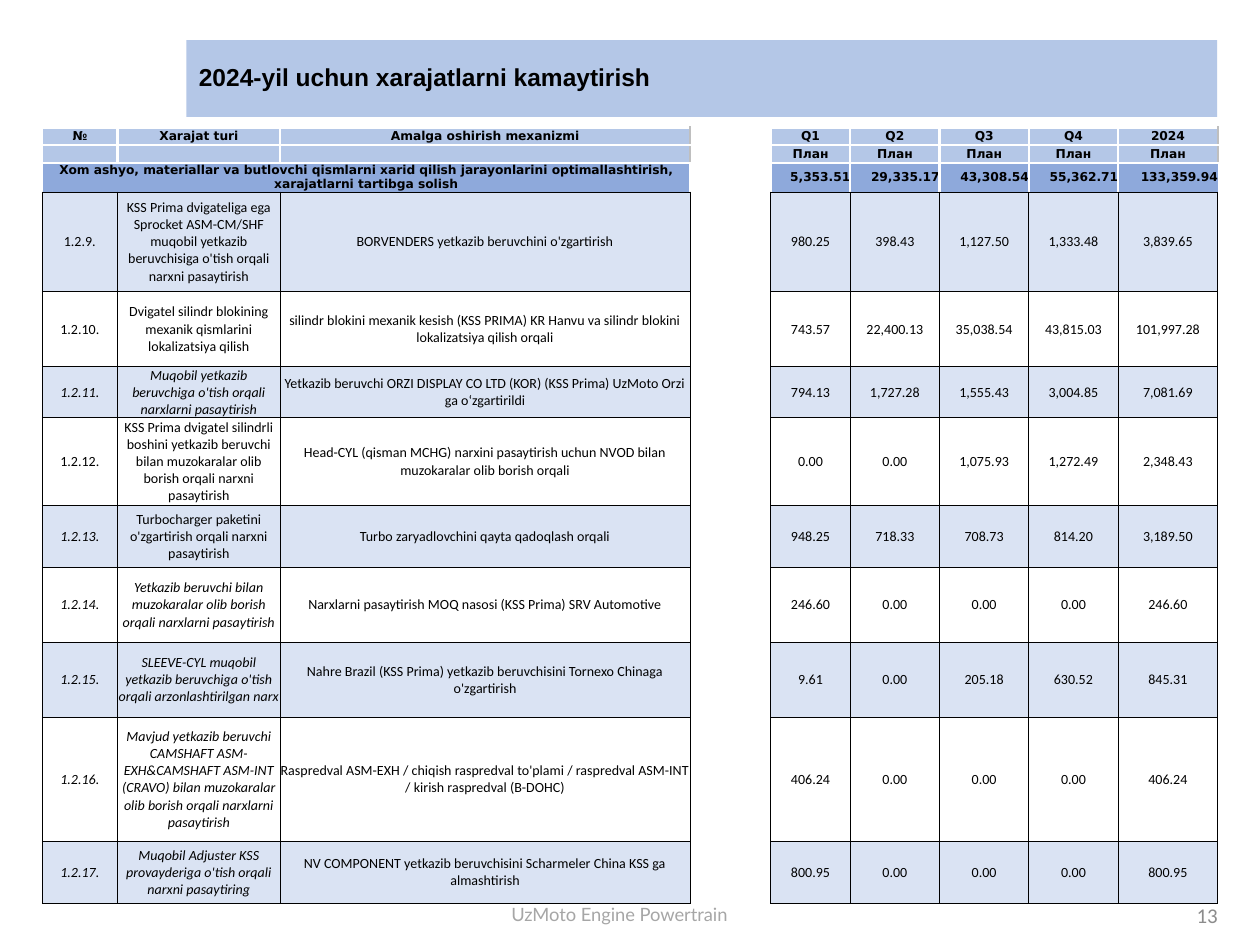
from lxml.etree import SubElement
from pptx import Presentation
from pptx.dml.color import RGBColor
from pptx.enum.shapes import MSO_SHAPE as Shape
from pptx.enum.text import MSO_ANCHOR as Anchor, PP_ALIGN as Align
from pptx.oxml.ns import qn
from pptx.util import Cm, Pt

# Content
TITLE = "2024-yil uchun xarajatlarni kamaytirish"
FOOTER = "UzMoto Engine Powertrain"
PAGE = "13"
HEADERS = [
    ["№", "Xarajat turi", "Amalga oshirish mexanizmi", "", "Q1", "Q2", "Q3", "Q4", "2024"],
    ["", "", "", ""] + ["План"] * 5,
]
SECTION = [
    "Xom ashyo, materiallar va butlovchi qismlarni xarid qilish jarayonlarini "
    "optimallashtirish, xarajatlarni tartibga solish",
    "", "", "", "5,353.51", "29,335.17", "43,308.54", "55,362.71", "133,359.94",
]
# number, cost type, mechanism, values, count of leading italic cells
MEASURES = [
    ("1.2.9.", "KSS Prima dvigateliga ega Sprocket ASM-CM/SHF muqobil yetkazib "
     "beruvchisiga o'tish orqali narxni pasaytirish",
     "BORVENDERS yetkazib beruvchini o'zgartirish",
     "980.25 398.43 1,127.50 1,333.48 3,839.65", 0),
    ("1.2.10.", "Dvigatel silindr blokining mexanik qismlarini lokalizatsiya qilish",
     "silindr blokini mexanik kesish (KSS PRIMA) KR Hanvu va silindr blokini "
     "lokalizatsiya qilish orqali",
     "743.57 22,400.13 35,038.54 43,815.03 101,997.28", 0),
    ("1.2.11.", "Muqobil yetkazib beruvchiga o'tish orqali narxlarni pasaytirish",
     "Yetkazib beruvchi ORZI DISPLAY CO LTD (KOR) (KSS Prima) UzMoto Orzi ga o‘zgartirildi",
     "794.13 1,727.28 1,555.43 3,004.85 7,081.69", 2),
    ("1.2.12.", "KSS Prima dvigatel silindrli boshini yetkazib beruvchi bilan "
     "muzokaralar olib borish orqali narxni pasaytirish",
     "Head-CYL (qisman MCHG) narxini pasaytirish uchun NVOD bilan muzokaralar olib borish orqali",
     "0.00 0.00 1,075.93 1,272.49 2,348.43", 0),
    ("1.2.13.", "Turbocharger paketini o'zgartirish orqali narxni pasaytirish",
     "Turbo zaryadlovchini qayta qadoqlash orqali",
     "948.25 718.33 708.73 814.20 3,189.50", 1),
    ("1.2.14.", "Yetkazib beruvchi bilan muzokaralar olib borish orqali narxlarni pasaytirish",
     "Narxlarni pasaytirish MOQ nasosi (KSS Prima) SRV Automotive",
     "246.60 0.00 0.00 0.00 246.60", 2),
    ("1.2.15.", "SLEEVE-CYL muqobil yetkazib beruvchiga o'tish orqali arzonlashtirilgan narx",
     "Nahre Brazil (KSS Prima) yetkazib beruvchisini Tornexo Chinaga o'zgartirish",
     "9.61 0.00 205.18 630.52 845.31", 2),
    ("1.2.16.", "Mavjud yetkazib beruvchi CAMSHAFT ASM-EXH&CAMSHAFT ASM-INT (CRAVO) "
     "bilan muzokaralar olib borish orqali narxlarni pasaytirish",
     "Raspredval ASM-EXH / chiqish raspredval to'plami / raspredval ASM-INT / "
     "kirish raspredval (B-DOHC)",
     "406.24 0.00 0.00 0.00 406.24", 2),
    ("1.2.17.", "Muqobil Adjuster KSS provayderiga o'tish orqali narxni pasaytiring",
     "NV COMPONENT yetkazib beruvchisini Scharmeler China KSS ga almashtirish",
     "800.95 0.00 0.00 0.00 800.95", 2),
]

# Sizes in centimetres
COLUMNS = [1.52, 3.28, 8.26, 1.63, 1.6, 1.8, 1.8, 1.8, 2.01]
ROWS = [0.36, 0.35, 0.56, 2.01, 1.51, 1.03, 1.77, 1.25, 1.51, 1.51, 2.5, 1.25]
GAP_COLUMN, LAST_COLUMN = 3, 8
SECTION_ROW = len(HEADERS)

WHITE, BLACK, GREY = "FFFFFF", "000000", "BFBFBF"
HEADER_BLUE, SECTION_BLUE, BAND_BLUE = "B4C7E7", "8EA9DB", "DAE3F3"
WHITE_LINE, BLACK_LINE, GREY_LINE = (WHITE, 1.5), (BLACK, 0.5), (GREY, 1)


def color(value):
    return RGBColor.from_string(value)


def write(frame, text, size, font, fill=BLACK, bold=False, italic=False, align=Align.CENTER):
    paragraph = frame.paragraphs[0]
    paragraph.alignment = align
    if not text:  # keeps an empty line from growing its row
        SubElement(paragraph._p, qn("a:endParaRPr"), sz=str(size * 100))
        return paragraph
    run = paragraph.add_run()
    run.text = text
    run.font.size, run.font.name = Pt(size), font
    run.font.bold, run.font.italic = bold, italic
    run.font.color.rgb = color(fill)
    return paragraph


def add_label(slide, place, text, size, font, fill, align, anchor):
    frame = slide.shapes.add_textbox(*map(Cm, place)).text_frame
    frame.word_wrap = True
    frame.vertical_anchor = anchor
    write(frame, text, size, font, fill, align=align)


def set_borders(cell, lines):
    """Lines go left, right, top, bottom; None hides an edge."""
    properties = cell._tc.get_or_add_tcPr()
    for index, (side, line) in enumerate(zip("LRTB", lines)):
        edge = SubElement(properties, qn(f"a:ln{side}"))
        properties.insert(index, edge)
        if line:
            edge.set("w", str(Pt(line[1])))
            SubElement(SubElement(edge, qn("a:solidFill")), qn("a:srgbClr"), val=line[0])
        else:
            SubElement(edge, qn("a:noFill"))


def borders_for(row, column):
    if row > SECTION_ROW:
        across = None if column == GAP_COLUMN else BLACK_LINE
        return BLACK_LINE, BLACK_LINE, across, across
    if column == GAP_COLUMN:
        return GREY_LINE, WHITE_LINE, None, None
    right = GREY_LINE if column in (GAP_COLUMN - 1, LAST_COLUMN) else WHITE_LINE
    if row == SECTION_ROW and column == LAST_COLUMN:
        right = None
    return WHITE_LINE, right, WHITE_LINE, BLACK_LINE if row == SECTION_ROW else WHITE_LINE


def fill_for(row, column):
    if column == GAP_COLUMN:
        return None
    if row <= SECTION_ROW:
        return SECTION_BLUE if row == SECTION_ROW else HEADER_BLUE
    return BAND_BLUE if (row - SECTION_ROW) % 2 else None


def add_cost_table(slide):
    rows = HEADERS + [SECTION] + [
        [number, kind, mechanism, "", *values.split()]
        for number, kind, mechanism, values, _ in MEASURES
    ]
    frame = slide.shapes.add_table(len(ROWS), len(COLUMNS), Cm(0.85), Cm(2.57),
                                   Cm(sum(COLUMNS)), Cm(sum(ROWS)))
    table = frame.table
    table.first_row = table.horz_banding = False
    for column, width in zip(table.columns, COLUMNS):
        column.width = Cm(width)
    for row, height in zip(table.rows, ROWS):
        row.height = Cm(height)
    for r, texts in enumerate(rows):
        heading = r <= SECTION_ROW
        italics = 0 if heading else MEASURES[r - SECTION_ROW - 1][4]
        for c, text in enumerate(texts):
            cell = table.cell(r, c)
            cell.margin_left = cell.margin_right = cell.margin_top = cell.margin_bottom = 0
            cell.vertical_anchor = Anchor.MIDDLE
            fill = fill_for(r, c)
            if fill:
                cell.fill.solid()
                cell.fill.fore_color.rgb = color(fill)
            else:
                cell.fill.background()
            set_borders(cell, borders_for(r, c))
            total = r == SECTION_ROW and c > GAP_COLUMN
            write(cell.text_frame, text, 7 if heading else 8,
                  "DejaVu Sans" if heading else "Calibri", bold=heading,
                  italic=c < italics, align=Align.RIGHT if total else Align.CENTER)
    table.cell(SECTION_ROW, 0).merge(table.cell(SECTION_ROW, GAP_COLUMN - 1))


def main():
    presentation = Presentation()
    presentation.slide_width, presentation.slide_height = Cm(25.4), Cm(19.05)
    slide = presentation.slides.add_slide(presentation.slide_layouts[6])

    # Footer
    add_label(slide, (9.63, 18.08, 5.72, 0.71), FOOTER, 10.5, "Lato", "A6A6A6",
              Align.CENTER, Anchor.TOP)

    # Title band
    band = slide.shapes.add_shape(Shape.RECTANGLE, Cm(3.76), Cm(0.81), Cm(20.78), Cm(1.55))
    band.shadow.inherit = False
    band.fill.solid()
    band.fill.fore_color.rgb = color(HEADER_BLUE)
    band.line.fill.background()
    band.text_frame.vertical_anchor = Anchor.MIDDLE
    title = write(band.text_frame, TITLE, 14, "Arial", bold=True, align=Align.LEFT)
    title.line_spacing = 0.9

    # Page number
    add_label(slide, (19.08, 17.93, 5.72, 1.02), PAGE, 12, "Calibri", "8C8C8C",
              Align.RIGHT, Anchor.MIDDLE)

    add_cost_table(slide)
    presentation.save("out.pptx")


if __name__ == "__main__":
    main()
